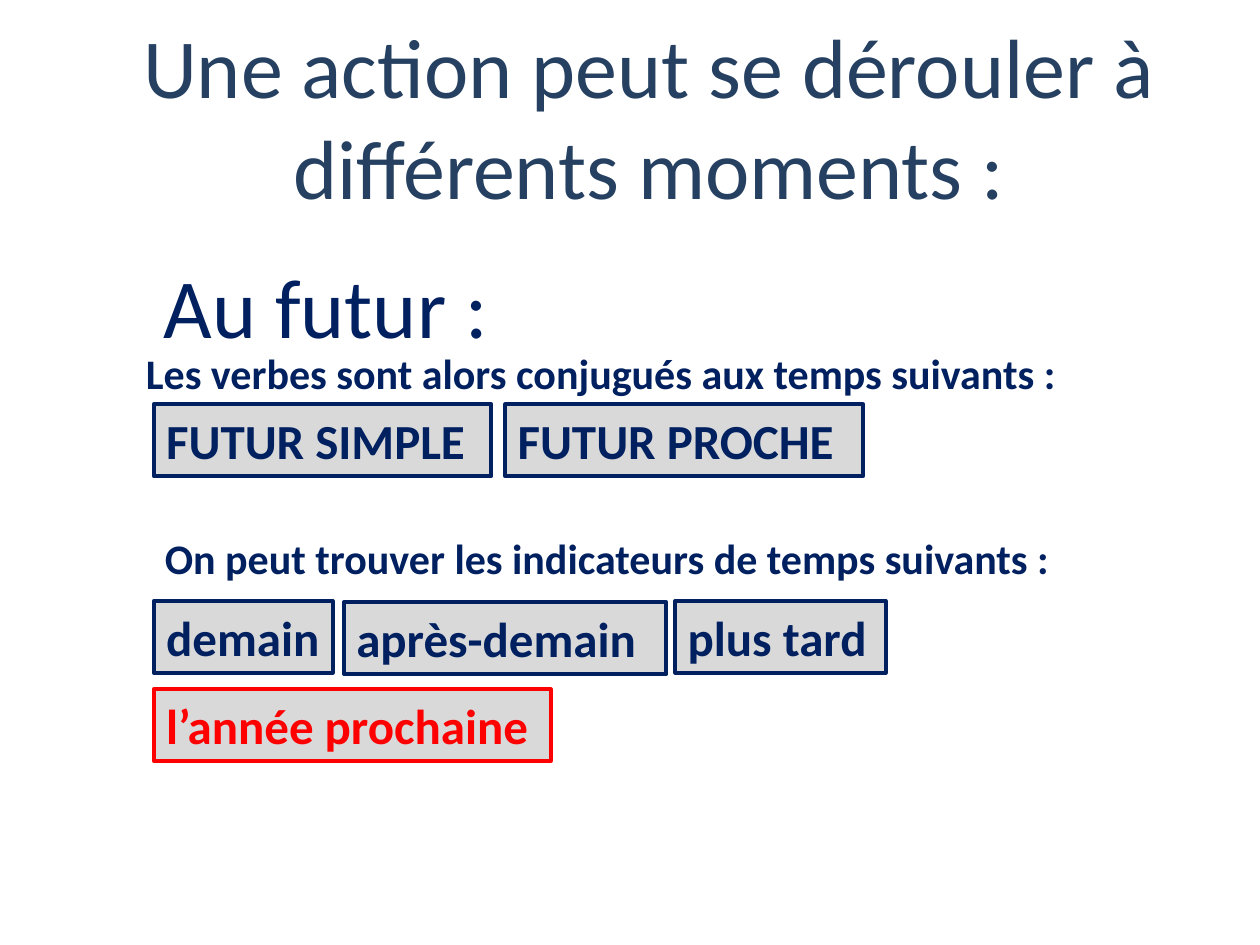
import pptx
import pptx.util
import pptx.dml.color
import pptx.enum.shapes
import pptx.enum.text

NAVY, SLATE, RED, GREY = "002060", "254061", "FF0000", "D9D9D9"

prs = pptx.Presentation()
prs.slide_width = pptx.util.Inches(10)
prs.slide_height = pptx.util.Inches(7.5)
s = prs.slides.add_slide(prs.slide_layouts[6])

# Grid of 100 columns by 75 rows
COL = prs.slide_width / 100
ROW = prs.slide_height / 75


def rgb(value):
    return pptx.dml.color.RGBColor.from_string(value)


def write(sp, text, size, color, bold=False):
    tf = sp.text_frame
    tf.word_wrap = True
    p = tf.paragraphs[0]
    p.alignment = pptx.enum.text.PP_ALIGN.LEFT
    r = p.add_run()
    r.text = text
    r.font.name = "Calibri"
    r.font.size = pptx.util.Pt(size)
    r.font.bold = bold
    r.font.color.rgb = rgb(color)
    return tf


# Title
sp = s.shapes.add_textbox(*map(round, (6.5 * COL, 2.9 * ROW, 90 * COL, 12.5 * ROW)))
tf = write(sp, "Une action peut se dérouler à différents moments :", 48, SLATE)
tf.vertical_anchor = pptx.enum.text.MSO_ANCHOR.MIDDLE
tf.paragraphs[0].alignment = pptx.enum.text.PP_ALIGN.CENTER

# Heading and lead-in sentences: column, row, width, height, text, size, bold
for x, y, w, h, text, size, bold in [
    (12, 19.7, 66.1, 9.1, "Au futur :", 48, False),
    (10.6, 27.1, 83, 5, "Les verbes sont alors conjugués aux temps suivants :", 24, True),
    (12.1, 41.8, 83, 5, "On peut trouver les indicateurs de temps suivants :", 24, True),
]:
    sp = s.shapes.add_textbox(round(x * COL), round(y * ROW), round(w * COL), round(h * ROW))
    write(sp, text, size, NAVY, bold)

# Framed labels: column, row, width, text, colour
for x, y, w, text, color in [
    (12.2, 32.1, 26.8, "FUTUR SIMPLE", NAVY),
    (40.1, 32.1, 28.4, "FUTUR PROCHE", NAVY),
    (12.2, 47.7, 14.2, "demain", NAVY),
    (27.3, 47.8, 25.6, "après-demain", NAVY),
    (53.6, 47.7, 16.7, "plus tard", NAVY),
    (12.2, 54.7, 31.5, "l’année prochaine", RED),
]:
    sp = s.shapes.add_shape(pptx.enum.shapes.MSO_SHAPE.RECTANGLE,
                            round(x * COL), round(y * ROW), round(w * COL), round(5.7 * ROW))
    sp.shadow.inherit = False
    sp.fill.solid()
    sp.fill.fore_color.rgb = rgb(GREY)
    sp.line.color.rgb = rgb(color)
    sp.line.width = pptx.util.Pt(2.25)
    tf = write(sp, text, 28, color, True)
    tf.vertical_anchor = pptx.enum.text.MSO_ANCHOR.TOP

prs.save("out.pptx")
